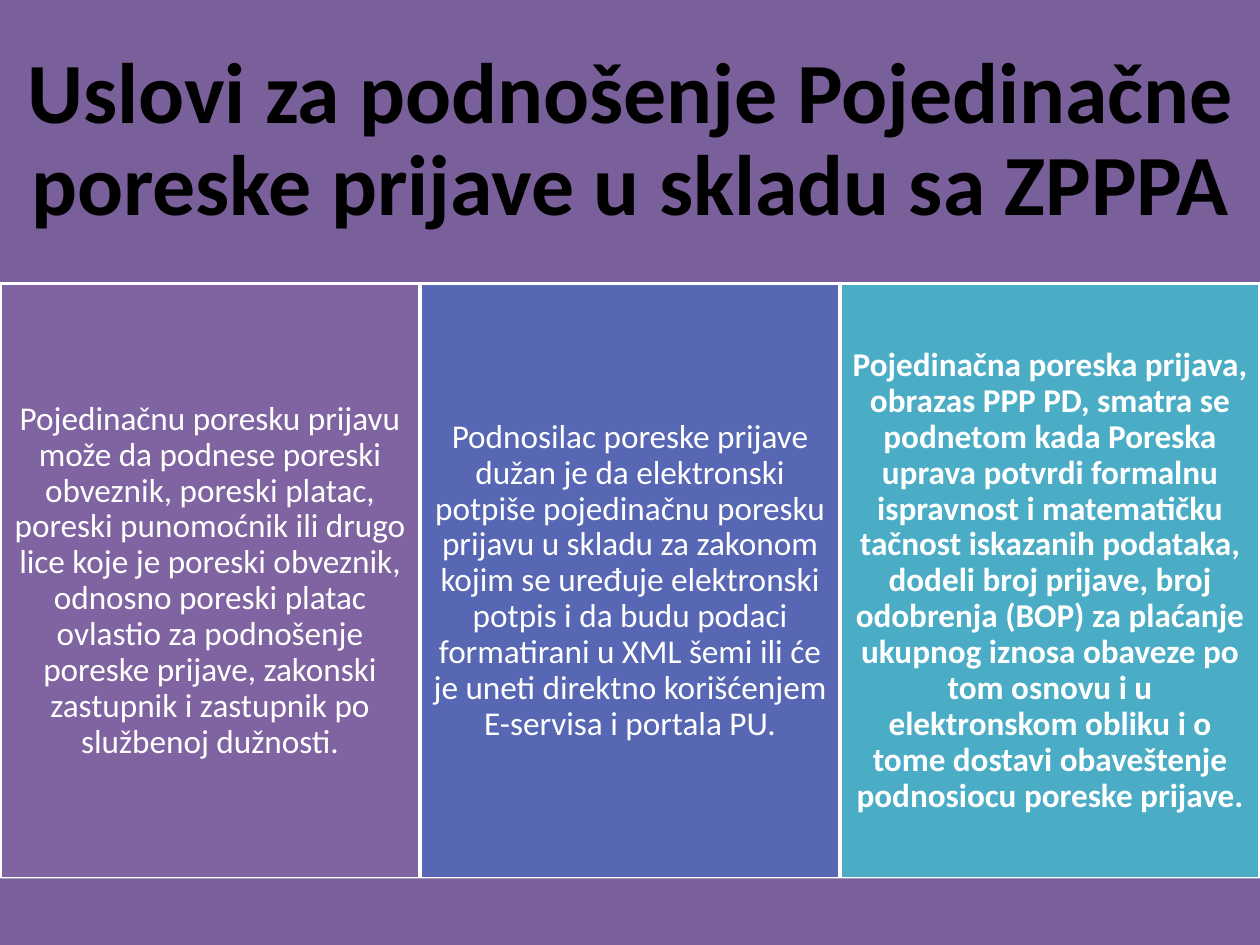
from dataclasses import dataclass

from pptx import Presentation
from pptx.dml.color import RGBColor
from pptx.enum.shapes import MSO_SHAPE
from pptx.enum.text import MSO_ANCHOR, MSO_AUTO_SIZE, PP_ALIGN
from pptx.util import Cm, Pt

RECTANGLE = MSO_SHAPE.RECTANGLE
MIDDLE = MSO_ANCHOR.MIDDLE
NO_AUTOFIT = MSO_AUTO_SIZE.NONE
CENTER = PP_ALIGN.CENTER

SLIDE_WIDTH, SLIDE_HEIGHT = 25.4, 19.05
HEADER_HEIGHT, COLUMN_HEIGHT = 5.72, 11.99
BAND_COLOR = "7A609B"
WHITE, BLACK = "FFFFFF", "000000"


@dataclass
class Condition:
    text: str
    fill: str
    bold: bool = False


CONDITIONS = [
    Condition(
        "Pojedinačnu poresku prijavu može da podnese poreski obveznik, "
        "poreski platac, poreski punomoćnik ili drugo lice koje je poreski "
        "obveznik, odnosno poreski platac ovlastio za podnošenje poreske "
        "prijave, zakonski zastupnik i zastupnik po službenoj dužnosti.",
        "8064A2",
    ),
    Condition(
        "Podnosilac poreske prijave dužan je da elektronski potpiše "
        "pojedinačnu poresku prijavu u skladu za zakonom kojim se uređuje "
        "elektronski potpis i da budu podaci formatirani u XML šemi ili će "
        "je uneti direktno korišćenjem E-servisa i portala PU.",
        "5767B4",
    ),
    Condition(
        "Pojedinačna poreska prijava, obrazas PPP PD, smatra se podnetom "
        "kada Poreska uprava potvrdi formalnu ispravnost i matematičku "
        "tačnost iskazanih podataka, dodeli broj prijave, broj odobrenja "
        "(BOP) za plaćanje ukupnog iznosa obaveze po tom osnovu i u "
        "elektronskom obliku i o tome dostavi obaveštenje podnosiocu "
        "poreske prijave.",
        "4BACC6",
        bold=True,
    ),
]


def rgb(color: str) -> RGBColor:
    return RGBColor.from_string(color)


def set_format(target, values: dict) -> None:
    for name, value in values.items():
        setattr(target, name, value)


def fill_solid(shape, color: str) -> None:
    shape.fill.solid()
    shape.fill.fore_color.rgb = rgb(color)


def write_text(shape, text: str, size: float, color: str, bold: bool, inset: float) -> None:
    frame = shape.text_frame
    frame.text = text
    margins = {f"margin_{side}": Cm(inset) for side in ("left", "top", "right", "bottom")}
    set_format(frame, {"word_wrap": True, "auto_size": NO_AUTOFIT,
                       "vertical_anchor": MIDDLE, **margins})
    paragraph = frame.paragraphs[0]
    set_format(paragraph, {"alignment": CENTER, "line_spacing": 0.9})
    font = paragraph.runs[0].font
    set_format(font, {"name": "Calibri", "size": Pt(size), "bold": bold})
    font.color.rgb = rgb(color)


def add_block(slide, left: float, top: float, width: float, height: float, color: str):
    block = slide.shapes.add_shape(RECTANGLE, Cm(left), Cm(top), Cm(width), Cm(height))
    block.shadow.inherit = False
    fill_solid(block, color)
    block.line.fill.background()
    return block


def add_header(slide, text: str) -> None:
    title = slide.shapes.title
    set_format(title, {"left": Cm(0), "top": Cm(0),
                       "width": Cm(SLIDE_WIDTH), "height": Cm(HEADER_HEIGHT)})
    fill_solid(title, BAND_COLOR)
    write_text(title, text, 49, BLACK, bold=True, inset=0.5)


def add_condition(slide, condition: Condition, left: float, width: float) -> None:
    column = add_block(slide, left, HEADER_HEIGHT, width, COLUMN_HEIGHT, condition.fill)
    column.line.color.rgb = rgb(WHITE)
    column.line.width = Pt(2)
    write_text(column, condition.text, 19, WHITE, condition.bold, inset=0.2)


def main() -> None:
    presentation = Presentation()
    set_format(presentation, {"slide_width": Cm(SLIDE_WIDTH), "slide_height": Cm(SLIDE_HEIGHT)})
    slide = presentation.slides.add_slide(presentation.slide_layouts[5])

    add_header(slide, "Uslovi za podnošenje Pojedinačne poreske prijave u skladu sa ZPPPA")

    column_width = SLIDE_WIDTH / len(CONDITIONS)
    for index, condition in enumerate(CONDITIONS):
        add_condition(slide, condition, index * column_width, column_width)

    footer_top = HEADER_HEIGHT + COLUMN_HEIGHT
    add_block(slide, 0, footer_top, SLIDE_WIDTH, SLIDE_HEIGHT - footer_top, BAND_COLOR)

    presentation.save("out.pptx")


if __name__ == "__main__":
    main()
